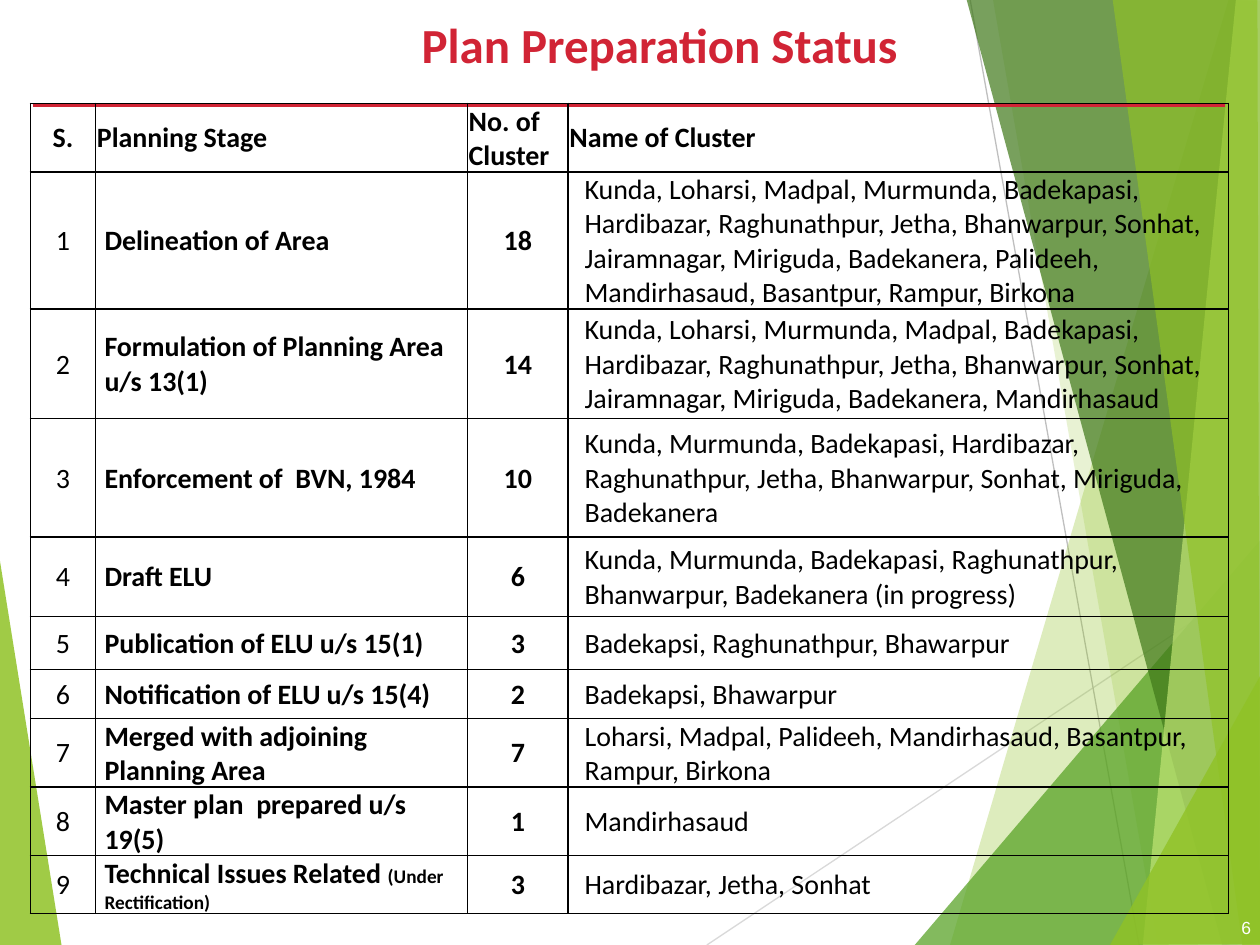
from lxml import etree
from pptx import Presentation
from pptx import util as u
from pptx.dml.color import RGBColor
from pptx.enum import shapes, text
from pptx.oxml import ns

GREEN, RED, BLACK = "90C226", "D12435", "000000"

FACETS = [
    (GREEN, 85, [(-0.01, 4.39), (0.49, 7.51), (-0.01, 7.5)]),
    (GREEN, 30, [(9.75, 0), (7.54, 7.5), (10.02, 7.51), (10.01, 0.01)]),
    (GREEN, 20, [(7.88, -0.01), (9.19, 7.5), (10.01, 7.5), (10.01, -0.01)]),
    ("54A021", 72, [(7.26, 7.5), (10, 4.29), (10.01, 7.5)]),
    ("3F7819", 70, [(7.67, -0.01), (9.7, 7.5), (10.01, 7.49), (10.01, -0.01)]),
    ("C0E474", 70, [(9.81, -0.01), (9.07, 7.5), (10.01, 7.5), (10, -0.01)]),
    (GREEN, 65, [(8.83, -0.01), (9.86, 7.5), (10, 7.5), (9.98, -0.01)]),
    (GREEN, 80, [(8.81, 7.5), (10.01, 5.35), (10.01, 7.49)]),
]

COLUMN_WIDTHS = [0.52, 2.95, 0.8, 5.24]
ROW_HEIGHTS = [0.34, 1.09, 0.87, 0.94, 0.63, 0.42, 0.39, 0.48, 0.48, 0.39]
HEADINGS = ["S.", "Planning Stage", "No. of Cluster", "Name of Cluster"]
STAGES = [
    ("Delineation of Area", "18",
     "Kunda, Loharsi, Madpal, Murmunda, Badekapasi, Hardibazar, Raghunathpur, "
     "Jetha, Bhanwarpur, Sonhat, Jairamnagar, Miriguda, Badekanera, Palideeh, "
     "Mandirhasaud, Basantpur, Rampur, Birkona"),
    ("Formulation of Planning Area u/s 13(1)", "14",
     "Kunda, Loharsi, Murmunda, Madpal, Badekapasi, Hardibazar, Raghunathpur, "
     "Jetha, Bhanwarpur, Sonhat, Jairamnagar, Miriguda, Badekanera, Mandirhasaud"),
    ("Enforcement of  BVN, 1984", "10",
     "Kunda, Murmunda, Badekapasi, Hardibazar, Raghunathpur, Jetha, Bhanwarpur, "
     "Sonhat, Miriguda, Badekanera"),
    ("Draft ELU", "6",
     "Kunda, Murmunda, Badekapasi, Raghunathpur, Bhanwarpur, Badekanera (in progress)"),
    ("Publication of ELU u/s 15(1)", "3", "Badekapsi, Raghunathpur, Bhawarpur"),
    ("Notification of ELU u/s 15(4)", "2", "Badekapsi, Bhawarpur"),
    ("Merged with adjoining Planning Area", "7",
     "Loharsi, Madpal, Palideeh, Mandirhasaud, Basantpur, Rampur, Birkona"),
    ("Master plan  prepared u/s 19(5)", "1", "Mandirhasaud"),
    ("Technical Issues Related ", "3", "Hardibazar, Jetha, Sonhat"),
]
LAST_STAGE_NOTE = "(Under Rectification)"


def color(value):
    return RGBColor.from_string(value)


def add_run(paragraph, content, size=16, value=BLACK, bold=False, font="Calibri"):
    run = paragraph.add_run()
    run.text = content
    run.font.size = u.Pt(size)
    run.font.name = font
    run.font.bold = bold
    run.font.color.rgb = color(value)


def add_facet(slide, value, opacity, points):
    corners = [(u.Inches(x), u.Inches(y)) for x, y in points]
    builder = slide.shapes.build_freeform(*corners[0])
    builder.add_line_segments(corners[1:], close=True)
    shape = builder.convert_to_shape()
    shape.shadow.inherit = False
    shape.line.fill.background()
    shape.fill.solid()
    shape.fill.fore_color.rgb = color(value)
    fill_color = shape.element.spPr.find(".//" + ns.qn("a:srgbClr"))
    etree.SubElement(fill_color, ns.qn("a:alpha"), val=str(opacity * 1000))


def add_line(slide, start, end, value, width):
    points = [u.Inches(length) for length in start + end]
    line = slide.shapes.add_connector(shapes.MSO_CONNECTOR.STRAIGHT, *points)
    line.line.color.rgb = color(value)
    line.line.width = u.Pt(width)
    etree.SubElement(line.element.spPr, ns.qn("a:effectLst"))


def set_insets(frame):
    frame.margin_left = frame.margin_right = 0
    frame.margin_top = frame.margin_bottom = 0


def add_title(slide, content):
    title = slide.shapes.title
    title.left, title.top = u.Inches(0.32), u.Inches(0.11)
    title.width, title.height = u.Inches(9.83), u.Inches(0.47)
    frame = title.text_frame
    set_insets(frame)
    frame.auto_size = text.MSO_AUTO_SIZE.SHAPE_TO_FIT_TEXT
    frame.vertical_anchor = text.MSO_ANCHOR.MIDDLE
    paragraph = frame.paragraphs[0]
    paragraph.alignment = text.PP_ALIGN.CENTER
    add_run(paragraph, content, 28, RED, True)
    title.element.getparent().append(title.element)


def add_page_number(slide, number):
    box = slide.shapes.add_textbox(
        u.Inches(9.76), u.Inches(7.28), u.Inches(0.17), u.Inches(0.17))
    frame = box.text_frame
    set_insets(frame)
    frame.word_wrap = False
    frame.auto_size = text.MSO_AUTO_SIZE.SHAPE_TO_FIT_TEXT
    paragraph = frame.paragraphs[0]
    paragraph.alignment = text.PP_ALIGN.RIGHT
    add_run(paragraph, number, 10, "FFFFFF", font="Arial")


def set_borders(cell):
    properties = cell._tc.get_or_add_tcPr()
    for index, side in enumerate(("a:lnL", "a:lnR", "a:lnT", "a:lnB")):
        border = etree.Element(ns.qn(side), w=str(u.Pt(1)))
        fill = etree.SubElement(border, ns.qn("a:solidFill"))
        etree.SubElement(fill, ns.qn("a:srgbClr"), val=BLACK)
        properties.insert(index, border)


def fill_cell(cell, content, bold, centered=False, indent=0):
    cell.fill.background()
    set_borders(cell)
    cell.vertical_anchor = text.MSO_ANCHOR.MIDDLE
    cell.margin_left = cell.margin_right = cell.margin_top = u.Inches(0.01)
    cell.margin_bottom = 0
    paragraph = cell.text_frame.paragraphs[0]
    paragraph.alignment = text.PP_ALIGN.CENTER if centered else text.PP_ALIGN.LEFT
    if indent:
        paragraph._p.get_or_add_pPr().set("marL", str(u.Inches(indent)))
    add_run(paragraph, content, bold=bold)


def add_status_table(slide):
    frame = slide.shapes.add_table(
        len(ROW_HEIGHTS), len(COLUMN_WIDTHS), u.Inches(0.24), u.Inches(0.82),
        u.Inches(sum(COLUMN_WIDTHS)), u.Inches(sum(ROW_HEIGHTS)))
    table = frame.table
    table.first_row = table.horz_banding = False
    for column, width in zip(table.columns, COLUMN_WIDTHS):
        column.width = u.Inches(width)
    for row, height in zip(table.rows, ROW_HEIGHTS):
        row.height = u.Inches(height)
    for column, heading in enumerate(HEADINGS):
        fill_cell(table.cell(0, column), heading, True, centered=column == 0)
    for row, (stage, count, clusters) in enumerate(STAGES, 1):
        fill_cell(table.cell(row, 0), str(row), False, centered=True)
        fill_cell(table.cell(row, 1), stage, True, indent=0.06)
        fill_cell(table.cell(row, 2), count, True, centered=True)
        fill_cell(table.cell(row, 3), clusters, False, indent=0.12)
    last_stage = table.cell(len(STAGES), 1).text_frame.paragraphs[0]
    add_run(last_stage, LAST_STAGE_NOTE, 11, bold=True)


def main():
    presentation = Presentation()
    presentation.slide_width, presentation.slide_height = u.Inches(10), u.Inches(7.5)
    slide = presentation.slides.add_slide(presentation.slide_layouts[5])
    add_facet(slide, *FACETS[0])
    add_line(slide, (5.61, 7.5), (10.01, 4.57), "D9D9D9", 0.75)
    add_line(slide, (7.7, 0), (9.04, 7.5), "BFBFBF", 0.75)
    for facet in FACETS[1:]:
        add_facet(slide, *facet)
    add_line(slide, (0.26, 0.84), (9.72, 0.84), RED, 1.5)
    add_page_number(slide, "6")
    add_status_table(slide)
    add_title(slide, "Plan Preparation Status")
    presentation.save("out.pptx")


if __name__ == "__main__":
    main()
